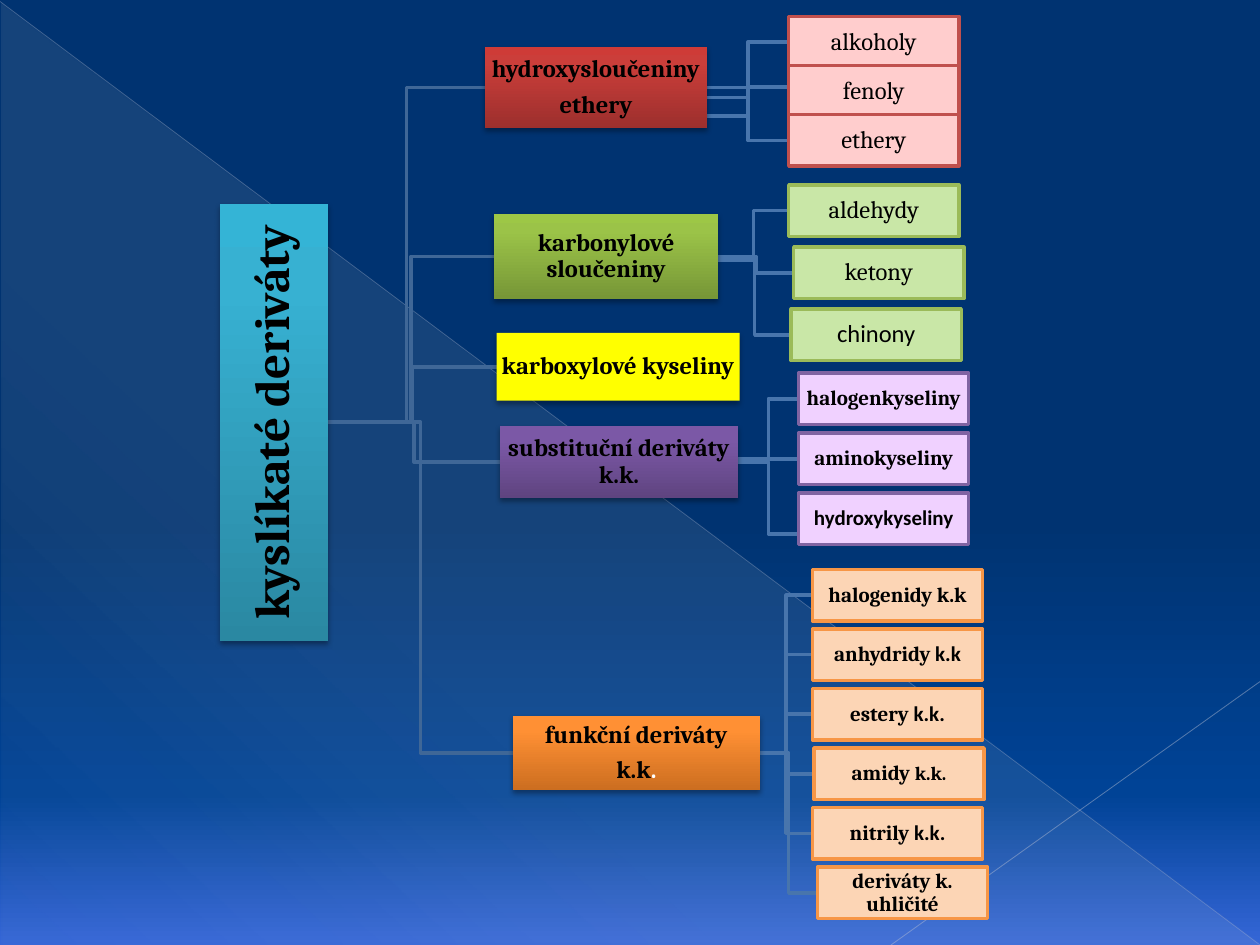
from dataclasses import dataclass

from lxml import etree
from pptx import Presentation
from pptx.dml.color import RGBColor
from pptx.enum.shapes import MSO_CONNECTOR, MSO_SHAPE
from pptx.enum.text import MSO_ANCHOR, MSO_AUTO_SIZE, PP_ALIGN
from pptx.oxml.ns import qn
from pptx.util import Cm, Pt

ELBOW, LINE = MSO_CONNECTOR.ELBOW, MSO_CONNECTOR.STRAIGHT
RECT, WEDGE = MSO_SHAPE.RECTANGLE, MSO_SHAPE.RIGHT_TRIANGLE
MIDDLE, CENTER, FIXED = MSO_ANCHOR.MIDDLE, PP_ALIGN.CENTER, MSO_AUTO_SIZE.NONE
SERIF, SANS = "Cambria", "Calibri"

HEX = {
    "text": "000000", "dot": "FFFFFF", "shade": "000000",
    "trunk": "3F6797", "twig": "4875AC",
    "sky": ("003371", "004396", "3566D7"), "veil": "EEECE1",
    "ray": "ADB6CE", "beam": "B6BED3",
    "root": ("2A88A2", "37B1D2", "34B4D6"),
    "red": ("9C2F2D", "CB3E3A", "CE3B37"),
    "green": ("779737", "9BC348", "9DC746"),
    "yellow": "FFFF00",
    "violet": ("5F4480", "7B58A6", "7C57A8"),
    "orange": ("CC6E20", "FF9034", "FF9136"),
    "red leaf": ("FFCDCD", "C0504D"),
    "green leaf": ("C9E7A7", "9BBB59"),
    "violet leaf": ("F0D1FF", "8064A2"),
    "orange leaf": ("FCD5B5", "F79646"),
}
ROOT = (1.12, 7.42, 8.81, 2.18)
LEAF = (3.43, 1.04)


@dataclass
class Leaf:
    text: str
    x: float
    out: float = 0
    end: float = 0
    font: str = SERIF
    tail: tuple = ()


@dataclass
class Branch:
    text: str
    box: tuple
    hue: str
    top: float = 0
    step: float = 0
    size: int = 14
    bold: bool = False
    leaves: tuple = ()
    tail: tuple = ()


TREE = (
    Branch("hydroxysloučeniny\nethery", (9.78, 0.94, 4.47, 1.65), "red", 0.33, 0.99, leaves=(
        Leaf("alkoholy", 15.9, 0.57), Leaf("fenoly", 15.9, 0.2, -0.09), Leaf("ethery", 15.9))),
    Branch("karbonylové sloučeniny", (9.96, 4.32, 4.52, 1.7), "green", 3.73, 1.25, leaves=(
        Leaf("aldehydy", 15.9, 0.07), Leaf("ketony", 16), Leaf("chinony", 15.95, font=SANS))),
    Branch("karboxylové kyseliny", (10.01, 6.71, 4.9, 1.37), "yellow"),
    Branch("substituční deriváty k.k.", (10.08, 8.59, 4.8, 1.45), "violet", 7.52, 1.21, 12, True, (
        Leaf("halogenkyseliny", 16.1, -0.04), Leaf("aminokyseliny", 16.1, -0.06),
        Leaf("hydroxykyseliny", 16.1, end=0.3, font=SANS))),
    Branch("funkční deriváty\nk.k", (10.34, 14.43, 4.98, 1.5), "orange", 11.48, 1.2, 12, True, (
        Leaf("halogenidy k.k", 16.38),
        Leaf("anhydridy ", 16.38, tail=("k.k", SANS, 12, "text")),
        Leaf("estery", 16.38, tail=(" k.k.", SANS, 12, "text")),
        Leaf("amidy ", 16.41, tail=("k.k.", SERIF, 11, "text")),
        Leaf("nitrily", 16.38, tail=(" k.k.", SANS, 12, "text")),
        Leaf("deriváty k. uhličité", 16.48)), (".", SERIF, 14, "dot")),
)


def rgb(code):
    return RGBColor.from_string(code)


def sub(node, tag, **attrs):
    return etree.SubElement(node, qn(tag), {k: str(v) for k, v in attrs.items()})


def blend(host, stops, angle):
    old = host.find(qn("a:solidFill"))
    grad = etree.Element(qn("a:gradFill"), rotWithShape="0")
    row = sub(grad, "a:gsLst")
    for spot, code, alpha in stops:
        tint = sub(sub(row, "a:gs", pos=spot * 1000), "a:srgbClr", val=code)
        if alpha < 100:
            sub(tint, "a:alpha", val=alpha * 1000)
    sub(grad, "a:lin", ang=angle * 60000, scaled=0)
    host.replace(old, grad)


def wire(slide, kind, ends, hue, width, alpha=100):
    link = slide.shapes.add_connector(kind, *map(Cm, ends))
    link.line.color.rgb = rgb(HEX[hue])
    link.line.width = Pt(width)
    sub(link.element.spPr, "a:effectLst")
    if alpha < 100:
        tint = link.element.spPr.find(".//" + qn("a:srgbClr"))
        sub(tint, "a:alpha", val=alpha * 1000)


def style(run, font, size, hue, bold):
    run.font.name = font
    run.font.size = Pt(size)
    run.font.bold = bold
    run.font.color.rgb = rgb(HEX[hue])


def write(shape, text, font, size, bold, tail=(), inset=0.03):
    frame = shape.text_frame
    frame.word_wrap = True
    frame.auto_size = FIXED
    frame.vertical_anchor = MIDDLE
    frame.margin_left = frame.margin_right = Cm(inset)
    frame.margin_top = frame.margin_bottom = Cm(inset)
    frame.text = text
    for para in frame.paragraphs:
        para.alignment = CENTER
        para.line_spacing = 0.9
        para.space_after = Pt(round(size * 0.35, 1))
        for run in para.runs:
            style(run, font, size, "text", bold)
    if tail:
        run = frame.paragraphs[-1].add_run()
        run.text = tail[0]
        style(run, *tail[1:], bold)


def paint(shape, hue):
    tones = HEX[hue]
    flat = isinstance(tones, str)
    shape.fill.solid()
    shape.fill.fore_color.rgb = rgb(tones if flat else tones[1])
    shape.line.fill.background()
    shape.shadow.inherit = False
    props = shape.element.spPr
    if not flat:
        blend(props, zip((0, 80, 100), tones, (100,) * 3), 270)
    shade = sub(props.find(qn("a:effectLst")), "a:outerShdw", blurRad=Pt(3.1),
                dist=Pt(1.8), dir=5400000, rotWithShape=0)
    sub(sub(shade, "a:srgbClr", val=HEX["shade"]), "a:alpha", val=35000)


def draw_back(slide, wide, high):
    slide.background.fill.solid()
    slide.background.fill.fore_color.rgb = rgb(HEX["sky"][0])
    host = slide.element.find(".//" + qn("p:bgPr"))
    blend(host, zip((55, 84, 100), HEX["sky"], (100,) * 3), 90)
    veil = slide.shapes.add_shape(WEDGE, Cm(0.03), Cm(0.05), Cm(wide - 0.03), Cm(high - 0.05))
    veil.fill.solid()
    veil.line.fill.background()
    veil.shadow.inherit = False
    blend(veil.element.spPr, zip((0, 70, 100), (HEX["veil"],) * 3, (10, 8, 1)), 133)
    wire(slide, LINE, (0, 0.03, wide, high), "ray", 0.39, 35)
    wire(slide, LINE, (wide, 13.74, 17.96, high), "beam", 0.47, 45)


def draw_leaf(slide, leaf, box, part):
    shape = slide.shapes.add_shape(RECT, *map(Cm, box))
    fill, edge = HEX[part.hue + " leaf"]
    shape.fill.solid()
    shape.fill.fore_color.rgb = rgb(fill)
    shape.line.color.rgb = rgb(edge)
    shape.line.width = Pt(2)
    shape.shadow.inherit = False
    write(shape, leaf.text, leaf.font, part.size, part.bold, leaf.tail)


def draw_branch(slide, part, start):
    left, top, wide, high = part.box
    mid = top + high / 2
    wire(slide, ELBOW, (*start, left, mid), "trunk", 2)
    spots = [(leaf, part.top + i * part.step) for i, leaf in enumerate(part.leaves)]
    for leaf, y in spots:
        ends = (left + wide, mid + leaf.out, leaf.x, y + LEAF[1] / 2 + leaf.end)
        wire(slide, ELBOW, ends, "twig", 2)
    shape = slide.shapes.add_shape(RECT, *map(Cm, part.box))
    paint(shape, part.hue)
    write(shape, part.text, SERIF, 14, True, part.tail)
    for leaf, y in spots:
        draw_leaf(slide, leaf, (leaf.x, y, *LEAF), part)


def draw_root(slide, box):
    title = slide.shapes.title
    title.left, title.top, title.width, title.height = map(Cm, box)
    title.rotation = 270
    paint(title, "root")
    write(title, "kyslíkaté deriváty", SERIF, 28, True, inset=0.05)
    slide.shapes.element.append(title.element)


def main():
    deck = Presentation()
    deck.slide_width, deck.slide_height = Cm(25.4), Cm(19.05)
    slide = deck.slides.add_slide(deck.slide_layouts[5])
    draw_back(slide, 25.4, 19.05)
    left, top, wide, high = ROOT
    start = (left + (wide + high) / 2, top + high / 2)
    for part in TREE:
        draw_branch(slide, part, start)
    draw_root(slide, ROOT)
    deck.save("out.pptx")


if __name__ == "__main__":
    main()
